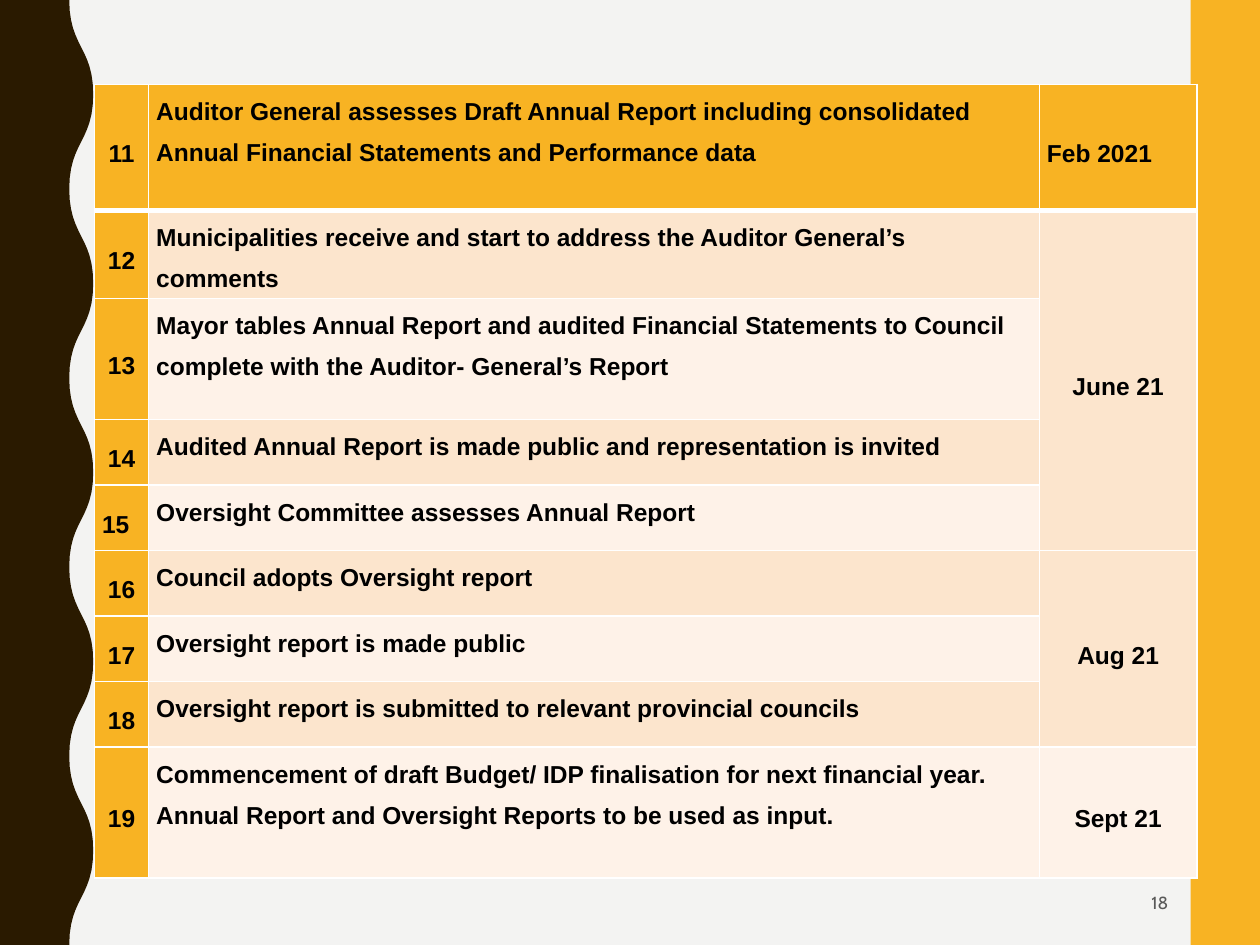
from dataclasses import dataclass

from lxml import etree
from pptx import Presentation
from pptx.dml.color import RGBColor
from pptx.enum.shapes import MSO_SHAPE
from pptx.enum.text import MSO_ANCHOR, PP_ALIGN
from pptx.oxml.ns import qn
from pptx.util import Inches, Pt

LEFT, CENTER, RIGHT = PP_ALIGN.LEFT, PP_ALIGN.CENTER, PP_ALIGN.RIGHT
TOP, MIDDLE = MSO_ANCHOR.TOP, MSO_ANCHOR.MIDDLE
RECTANGLE = MSO_SHAPE.RECTANGLE


@dataclass(frozen=True)
class Theme:
    background: str = "F3F3F2"
    gold: str = "F8B323"
    brown: str = "2A1A00"
    bands: tuple = ("FEF2E8", "FCE5CD")
    border: str = "FFFFFF"
    text: str = "000000"
    muted: str = "595959"
    table_font: str = "Arial"
    number_font: str = "Cabin"
    table_size: int = 14
    number_size: int = 10


THEME = Theme()
PAGE_NUMBER = "18"
SLIDE_WIDTH, SLIDE_HEIGHT = 10, 7.5
COLUMN_WIDTHS = (0.43, 7.07, 1.25)
FIRST_STEP = 11
STEPS = [
    ("Auditor General assesses Draft Annual Report including consolidated "
     "Annual Financial Statements and Performance data", 1),
    ("Municipalities receive and start to address the Auditor General’s comments", 0.52),
    ("Mayor tables Annual Report and audited Financial Statements to Council "
     "complete with the Auditor- General’s Report", 0.96),
    ("Audited Annual Report is made public and representation is invited", 0.52),
    ("Oversight Committee assesses Annual Report", 0.52),
    ("Council adopts Oversight report", 0.52),
    ("Oversight report is made public", 0.52),
    ("Oversight report is submitted to relevant provincial councils", 0.52),
    ("Commencement of draft Budget/ IDP finalisation for next financial year. "
     "Annual Report and Oversight Reports to be used as input.", 1.04),
]
DEADLINES = [("Feb 2021", 1), ("June 21", 4), ("Aug 21", 3), ("Sept 21", 1)]
LEFT_ALIGNED = ("15", "Feb 2021")


def paint(shape, color):
    shape.shadow.inherit = False
    shape.fill.solid()
    shape.fill.fore_color.rgb = RGBColor.from_string(color)
    shape.line.fill.background()


def set_font(paragraph, name, size, color, bold=False):
    paragraph.font.name = name
    paragraph.font.size = Pt(size)
    paragraph.font.bold = bold
    paragraph.font.color.rgb = RGBColor.from_string(color)


def add_wave(slide, inner=0.55, outer=0.74, half_wave=0.75, samples=12):
    points = []
    for half in range(round(SLIDE_HEIGHT / half_wave)):
        start, end = (inner, outer) if half % 2 == 0 else (outer, inner)
        for sample in range(1, samples + 1):
            t = sample / samples
            x = start + (end - start) * (3 * t**2 - 2 * t**3)
            y = half_wave * (half + 1.5 * t * (1 - t) + t**3)
            points.append((Inches(x), Inches(y)))
    builder = slide.shapes.build_freeform(Inches(inner), 0)
    builder.add_line_segments(points + [(0, Inches(SLIDE_HEIGHT)), (0, 0)])
    paint(builder.convert_to_shape(), THEME.brown)


def style_cell(cell, fill, bottom_width):
    cell.fill.solid()
    cell.fill.fore_color.rgb = RGBColor.from_string(fill)
    cell.margin_left = cell.margin_right = Inches(0.06)
    cell.margin_top = cell.margin_bottom = 0
    properties = cell._tc.get_or_add_tcPr()
    widths = {"a:lnL": 1, "a:lnR": 1, "a:lnT": 1, "a:lnB": bottom_width}
    for position, (tag, width) in enumerate(widths.items()):
        line = etree.Element(qn(tag), w=str(Pt(width)))
        solid = etree.SubElement(line, qn("a:solidFill"))
        etree.SubElement(solid, qn("a:srgbClr"), val=THEME.border)
        properties.insert(position, line)


def write_cell(cell, text, anchor=MIDDLE, alignment=CENTER, space_after=3):
    cell.text = text
    cell.vertical_anchor = anchor
    paragraph = cell.text_frame.paragraphs[0]
    paragraph.alignment = LEFT if text in LEFT_ALIGNED else alignment
    paragraph.line_spacing = 1.5
    paragraph.space_after = Pt(space_after)
    set_font(paragraph, THEME.table_font, THEME.table_size, THEME.text, bold=True)


def add_schedule(slide):
    heights = [height for _, height in STEPS]
    table = slide.shapes.add_table(
        len(STEPS), len(COLUMN_WIDTHS), Inches(0.75), Inches(0.67),
        Inches(sum(COLUMN_WIDTHS)), Inches(sum(heights))).table
    table.horz_banding = False
    for column, width in zip(table.columns, COLUMN_WIDTHS):
        column.width = Inches(width)
    for index, (description, height) in enumerate(STEPS):
        table.rows[index].height = Inches(height)
        band = THEME.bands[index % 2] if index else THEME.gold
        for column, fill in enumerate((THEME.gold, band, band)):
            style_cell(table.cell(index, column), fill, 1 if index else 3)
        write_cell(table.cell(index, 0), str(FIRST_STEP + index))
        write_cell(table.cell(index, 1), description, TOP, LEFT, 0)
    row = 0
    for deadline, span in DEADLINES:
        cell = table.cell(row, 2)
        if span > 1:
            cell.merge(table.cell(row + span - 1, 2))
        write_cell(cell, deadline)
        row += span


def add_page_number(slide):
    box = slide.shapes.add_textbox(Inches(7.06), Inches(6.97), Inches(2.31), Inches(0.38))
    frame = box.text_frame
    frame.word_wrap = True
    frame.vertical_anchor = MIDDLE
    paragraph = frame.paragraphs[0]
    paragraph.text = PAGE_NUMBER
    paragraph.alignment = RIGHT
    set_font(paragraph, THEME.number_font, THEME.number_size, THEME.muted)


def main():
    """Build the annual report schedule slide."""
    presentation = Presentation()
    presentation.slide_width = Inches(SLIDE_WIDTH)
    presentation.slide_height = Inches(SLIDE_HEIGHT)
    slide = presentation.slides.add_slide(presentation.slide_layouts[6])
    slide.background.fill.solid()
    slide.background.fill.fore_color.rgb = RGBColor.from_string(THEME.background)
    side_bar = slide.shapes.add_shape(
        RECTANGLE, Inches(9.45), 0, Inches(0.55), Inches(SLIDE_HEIGHT))
    paint(side_bar, THEME.gold)
    add_wave(slide)
    add_page_number(slide)
    add_schedule(slide)
    presentation.save("out.pptx")


if __name__ == "__main__":
    main()
